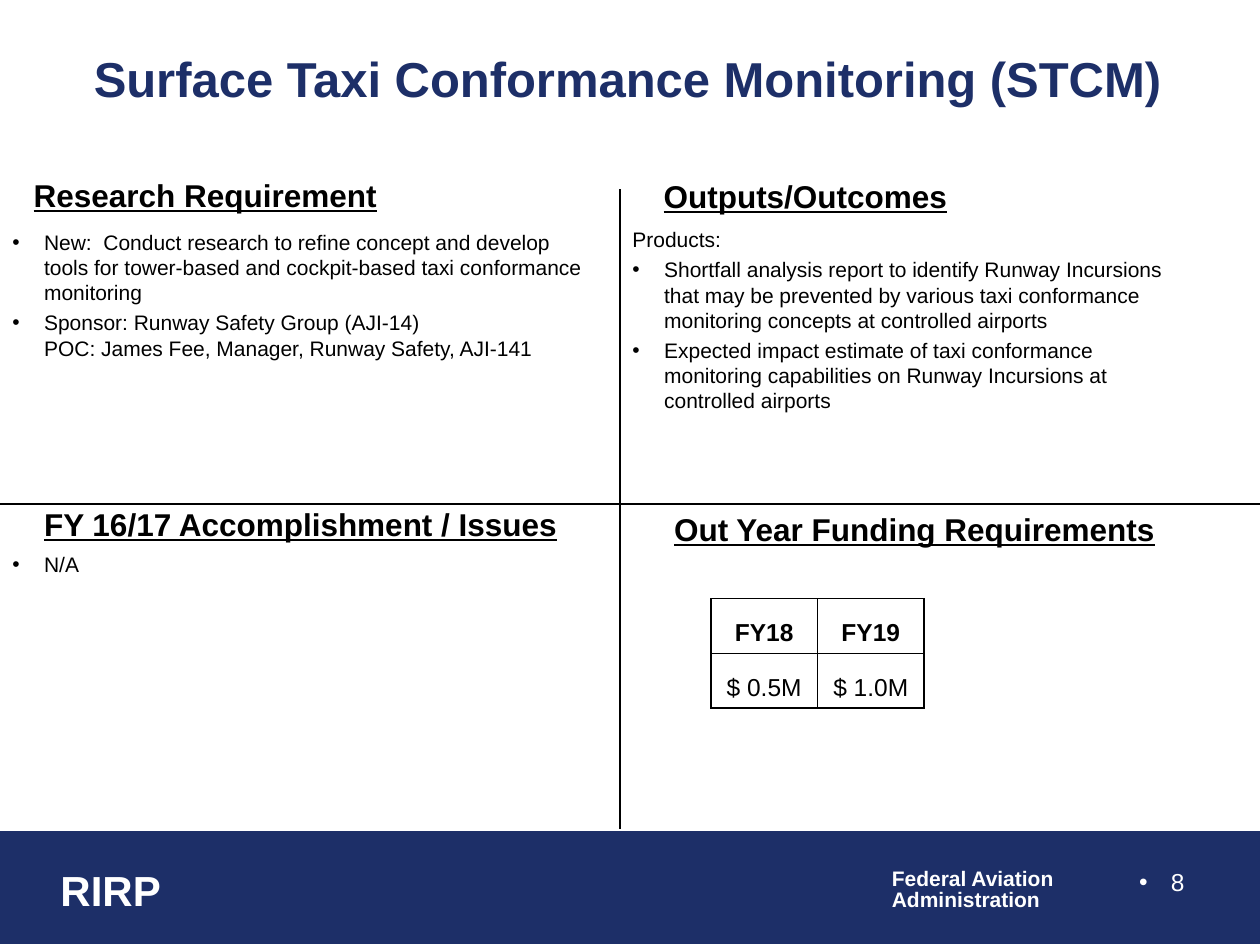
from lxml import etree
from pptx import Presentation
from pptx.enum.shapes import MSO_CONNECTOR, MSO_SHAPE
from pptx.enum.text import MSO_ANCHOR, PP_ALIGN
from pptx.oxml.ns import qn
from pptx.dml.color import RGBColor
from pptx.util import Cm, Pt

LINE = MSO_CONNECTOR.STRAIGHT
RECT = MSO_SHAPE.RECTANGLE
MIDDLE, BOTTOM = MSO_ANCHOR.MIDDLE, MSO_ANCHOR.BOTTOM
CENTER, RIGHT = PP_ALIGN.CENTER, PP_ALIGN.RIGHT

COLORS = {"navy": "1D2F68", "white": "FFFFFF", "black": "000000"}
FONT = "Arial"
INDENT = Cm(0.64)
WIDTH, HEIGHT = 25.4, 19.05
MID_X, MID_Y = 12.5, 10.16

# Quadrant headings: text, left, top, width, height
HEADS = [
    ("Research Requirement", 0.43, 3.43, 12.7, 0.84),
    ("Outputs/Outcomes", 13.13, 3.45, 11.86, 0.84),
    ("FY 16/17 Accomplishment / Issues", 0.64, 10.06, 11.43, 0.97),
    ("Out Year Funding Requirements", 13.34, 10.16, 11.23, 1.37),
]

# Quadrant bodies: lead line, bullets, left, top, width, height
BODIES = [
    (None, ["New:  Conduct research to refine concept and develop tools for "
            "tower-based and cockpit-based taxi conformance monitoring",
            "Sponsor: Runway Safety Group (AJI-14)\v"
            "POC: James Fee, Manager, Runway Safety, AJI-141"],
     0, 4.5, 12.32, 3.02),
    ("Products:",
     ["Shortfall analysis report to identify Runway Incursions that may be "
      "prevented by various taxi conformance monitoring concepts at "
      "controlled airports",
      "Expected impact estimate of taxi conformance monitoring "
      "capabilities on Runway Incursions at controlled airports"],
     MID_X, 4.45, 11.23, 4.06),
    (None, ["N/A"], 0, 11, MID_X, 2.31),
]

FUNDS = [("FY18", "FY19"), ("$ 0.5M", "$ 1.0M")]


def color(name):
    return RGBColor.from_string(COLORS[name])


def style(para, size, hue="black", bold=False, under=False):
    for run in para.runs:
        font = run.font
        font.name, font.size = FONT, Pt(size)
        font.bold, font.underline = bold, under
        font.color.rgb = color(hue)


def bullet(para, hue="black"):
    props = para._p.get_or_add_pPr()
    props.set("marL", str(INDENT))
    props.set("indent", str(-INDENT))
    tint = etree.SubElement(props, qn("a:buClr"))
    etree.SubElement(tint, qn("a:srgbClr"), val=COLORS[hue])
    etree.SubElement(props, qn("a:buFont"), typeface=FONT)
    etree.SubElement(props, qn("a:buChar"), char="•")


def add_text(slide, text, left, top, width, height, size, wrap=True, **look):
    box = slide.shapes.add_textbox(Cm(left), Cm(top), Cm(width), Cm(height))
    frame = box.text_frame
    frame.word_wrap = wrap
    frame.text = text
    for para in frame.paragraphs:
        style(para, size, **look)
    return frame


def add_body(slide, lead, points, left, top, width, height):
    lines = ([lead] if lead else []) + points
    frame = add_text(slide, "", left, top, width, height, 12)
    for i, line in enumerate(lines):
        para = frame.add_paragraph() if i else frame.paragraphs[0]
        para.text = line
        if line != lead:
            bullet(para)
        if i:
            para.space_before = Pt(2.8)
        style(para, 12)


def add_line(slide, x1, y1, x2, y2):
    line = slide.shapes.add_connector(LINE, Cm(x1), Cm(y1), Cm(x2), Cm(y2))
    line.line.color.rgb = color("black")
    line.line.width = Pt(0.75)
    etree.SubElement(line._element.spPr, qn("a:effectLst"))


def set_border(cell):
    props = cell._tc.get_or_add_tcPr()
    for i, side in enumerate(("lnL", "lnR", "lnT", "lnB")):
        edge = etree.Element(qn("a:" + side), w=str(Pt(1)))
        fill = etree.SubElement(edge, qn("a:solidFill"))
        etree.SubElement(fill, qn("a:srgbClr"), val=COLORS["black"])
        props.insert(i, edge)


def add_funds(slide, left, top, col, row):
    count = len(FUNDS[0])
    table = slide.shapes.add_table(
        len(FUNDS), count, Cm(left), Cm(top),
        Cm(col * count), Cm(row * len(FUNDS))).table
    table.first_row = table.horz_banding = False
    for r, texts in enumerate(FUNDS):
        for c, text in enumerate(texts):
            cell = table.cell(r, c)
            cell.text = text
            cell.vertical_anchor = BOTTOM
            cell.fill.background()
            para = cell.text_frame.paragraphs[0]
            para.alignment = CENTER
            style(para, 14, bold=r == 0)
            set_border(cell)


def add_footer(slide):
    bar = slide.shapes.add_shape(RECT, 0, Cm(16.76), Cm(WIDTH), Cm(2.26))
    bar.shadow.inherit = False
    bar.fill.solid()
    bar.fill.fore_color.rgb = bar.line.color.rgb = color("navy")
    bar.line.width = Pt(0.75)
    agency = add_text(slide, "Federal Aviation\nAdministration", 17.73, 17.4,
                      3.81, 1.12, 12, wrap=False, hue="white", bold=True)
    for para in agency.paragraphs:
        para.line_spacing = 0.85
    add_text(slide, "RIRP", 0.97, 17.3, 5.92, 1.32, 24, hue="white", bold=True)
    page = add_text(slide, "8", 18.21, 17.35, 5.92, 1.32, 14, hue="white")
    page.paragraphs[0].alignment = RIGHT
    bullet(page.paragraphs[0], "white")


def main():
    deck = Presentation()
    deck.slide_width, deck.slide_height = Cm(WIDTH), Cm(HEIGHT)
    slide = deck.slides.add_slide(deck.slide_layouts[6])

    # Footer and title
    add_footer(slide)
    title = add_text(slide, "Surface Taxi Conformance Monitoring (STCM)",
                     0, 0.2, 25.3, 2.74, 28, hue="navy", bold=True)
    title.vertical_anchor = MIDDLE
    title.paragraphs[0].alignment = CENTER

    # Four quadrants
    for text, *place in HEADS:
        add_text(slide, text, *place, 18, bold=True, under=True)
    add_line(slide, MID_X, 3.81, MID_X, 16.71)
    add_line(slide, 0, MID_Y, WIDTH, MID_Y)
    for body in BODIES:
        add_body(slide, *body)
    add_funds(slide, 14.33, 12.07, 2.15, 1.1)

    deck.save("out.pptx")


if __name__ == "__main__":
    main()
